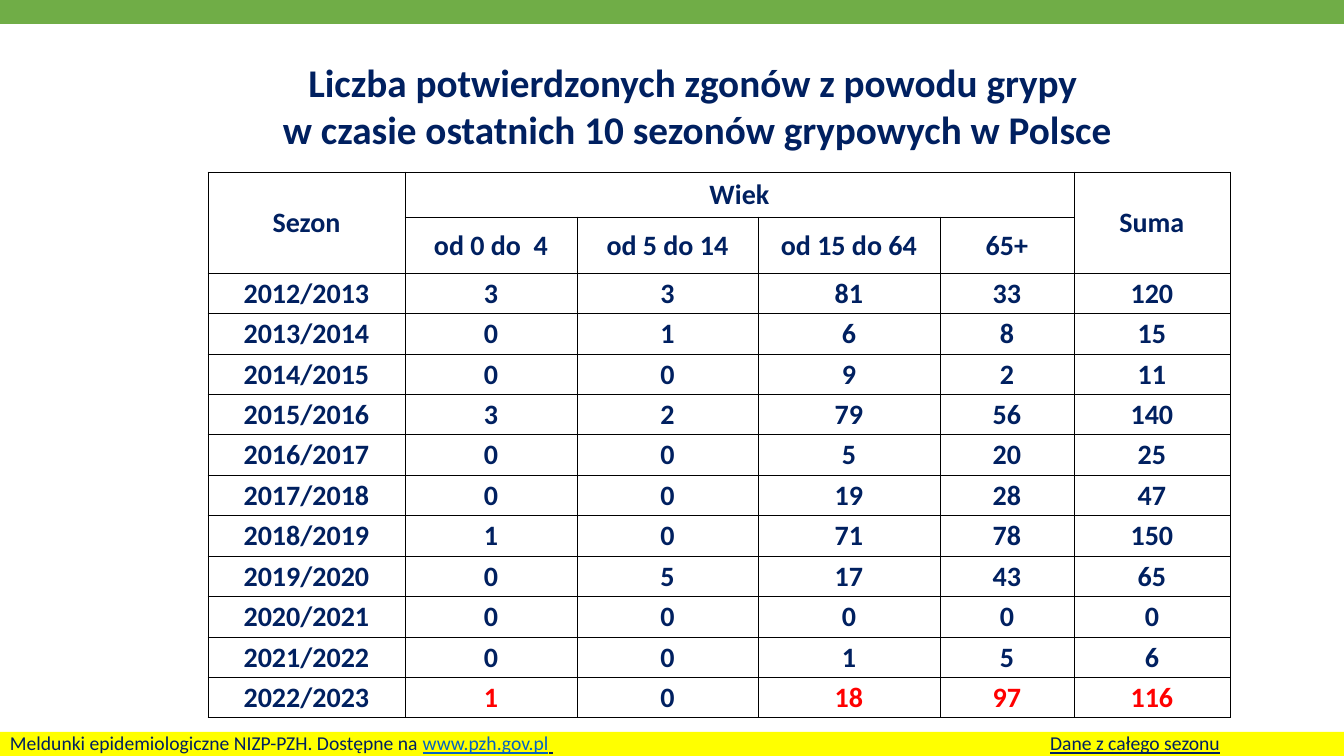
import lxml.etree
import pptx
import pptx.dml.color
import pptx.enum.shapes
import pptx.enum.text
import pptx.oxml.ns
import pptx.util

RGB = pptx.dml.color.RGBColor
ALIGN = pptx.enum.text.PP_ALIGN
ANCHOR = pptx.enum.text.MSO_ANCHOR

# Content
HEADING = ["Liczba potwierdzonych zgonów z powodu grypy ",
           "w czasie ostatnich 10 sezonów grypowych w Polsce"]
HEADER = [["Sezon", "Wiek", "", "", "", "Suma"],
          ["", "od 0 do  4", "od 5 do 14", "od 15 do 64", "65+", ""]]
DEATHS = [
    ("2012/2013", 3, 3, 81, 33, 120),
    ("2013/2014", 0, 1, 6, 8, 15),
    ("2014/2015", 0, 0, 9, 2, 11),
    ("2015/2016", 3, 2, 79, 56, 140),
    ("2016/2017", 0, 0, 5, 20, 25),
    ("2017/2018", 0, 0, 19, 28, 47),
    ("2018/2019", 1, 0, 71, 78, 150),
    ("2019/2020", 0, 5, 17, 43, 65),
    ("2020/2021", 0, 0, 0, 0, 0),
    ("2021/2022", 0, 0, 1, 5, 6),
    ("2022/2023", 1, 0, 18, 97, 116),
]
REPORTS = "Meldunki epidemiologiczne NIZP-PZH. Dostępne na "
ADDRESS = "www.pzh.gov.pl"
COVERAGE = "Dane z całego sezonu"

# Colours and layout, in px
NAVY = RGB(0x00, 0x20, 0x60)
RED = RGB(0xFF, 0x00, 0x00)
LINK = RGB(0x05, 0x63, 0xC1)
GREEN = RGB(0x70, 0xAD, 0x47)
YELLOW = RGB(0xFF, 0xFF, 0x00)
WIDTH, HEIGHT, BAR = 1344, 756, 24
TABLE_LEFT, TABLE_TOP = 208, 172
COLUMNS = [197, 172, 181, 182, 134, 156]
HEADER_ROWS = [45, 56]
SEASONS_HEIGHT = 445


def px(length):
    return pptx.util.Emu(round(length * 914400 / 100.8))


def set_font(font, size, color=NAVY, bold=False):
    font.name = "Calibri"
    font.size = pptx.util.Pt(size)
    font.bold = bold
    font.color.rgb = color


def add_bar(slide, top, color):
    bar = slide.shapes.add_shape(pptx.enum.shapes.MSO_SHAPE.RECTANGLE,
                                 0, px(top), px(WIDTH), px(BAR))
    bar.shadow.inherit = False
    bar.fill.solid()
    bar.fill.fore_color.rgb = color
    bar.line.fill.background()


def add_note(slide, left, width, align):
    frame = slide.shapes.add_textbox(px(left), px(726), px(width), px(34)).text_frame
    frame.word_wrap = True
    note = frame.paragraphs[0]
    note.alignment = align
    set_font(note.font, 14)
    return note


def add_borders(cell):
    properties = cell._tc.get_or_add_tcPr()
    for side in ("a:lnL", "a:lnR", "a:lnT", "a:lnB"):
        border = lxml.etree.SubElement(properties, pptx.oxml.ns.qn(side),
                                       w=str(pptx.util.Pt(0.5)))
        fill = lxml.etree.SubElement(border, pptx.oxml.ns.qn("a:solidFill"))
        lxml.etree.SubElement(fill, pptx.oxml.ns.qn("a:srgbClr"), val="000000")


def fill_cell(cell, text, color):
    add_borders(cell)
    cell.fill.background()
    cell.vertical_anchor = ANCHOR.MIDDLE
    cell.margin_left = cell.margin_right = cell.margin_top = px(1)
    cell.margin_bottom = 0
    entry = cell.text_frame.paragraphs[0]
    entry.text = text
    entry.alignment = ALIGN.CENTER
    set_font(entry.font, 20, color, bold=True)


def add_deaths_table(slide):
    rows = HEADER + DEATHS
    table = slide.shapes.add_table(
        len(rows), len(COLUMNS), px(TABLE_LEFT), px(TABLE_TOP),
        px(sum(COLUMNS)), px(sum(HEADER_ROWS) + SEASONS_HEIGHT)).table
    table.first_row = table.horz_banding = False
    for column, width in zip(table.columns, COLUMNS):
        column.width = px(width)
    season_row = SEASONS_HEIGHT / len(DEATHS)
    for row, height in zip(table.rows, HEADER_ROWS + [season_row] * len(DEATHS)):
        row.height = px(height)
    for r, row in enumerate(rows):
        for c, value in enumerate(row):
            # Deaths in the latest season stand out in red
            latest = row is DEATHS[-1] and c > 0 and value > 0
            fill_cell(table.cell(r, c), str(value), RED if latest else NAVY)
    for first, last in [((0, 0), (1, 0)), ((0, 1), (0, 4)), ((0, 5), (1, 5))]:
        table.cell(*first).merge(table.cell(*last))


def main():
    deck = pptx.Presentation()
    deck.slide_width, deck.slide_height = px(WIDTH), px(HEIGHT)
    slide = deck.slides.add_slide(deck.slide_layouts[5])

    # Bars along the top and bottom edges
    add_bar(slide, 0, GREEN)
    add_bar(slide, HEIGHT - BAR, YELLOW)

    add_deaths_table(slide)

    # Title
    title = slide.shapes.title
    title.left, title.top, title.width, title.height = px(92), px(59), px(1210), px(93)
    frame = title.text_frame
    frame.text = "\n".join(HEADING)
    frame.auto_size = pptx.enum.text.MSO_AUTO_SIZE.NONE
    frame.vertical_anchor = ANCHOR.MIDDLE
    for line in frame.paragraphs:
        line.alignment = ALIGN.CENTER
        set_font(line.font, 28, bold=True)

    # Footer notes
    reports = add_note(slide, 0, 778, ALIGN.LEFT)
    reports.add_run().text = REPORTS
    for text, color in [(ADDRESS, LINK), (" ", NAVY)]:
        run = reports.add_run()
        run.text = text
        run.font.underline = True
        run.font.color.rgb = color
    coverage = add_note(slide, 860, 370, ALIGN.RIGHT)
    coverage.text = COVERAGE
    coverage.font.underline = True

    deck.save("out.pptx")


if __name__ == "__main__":
    main()
